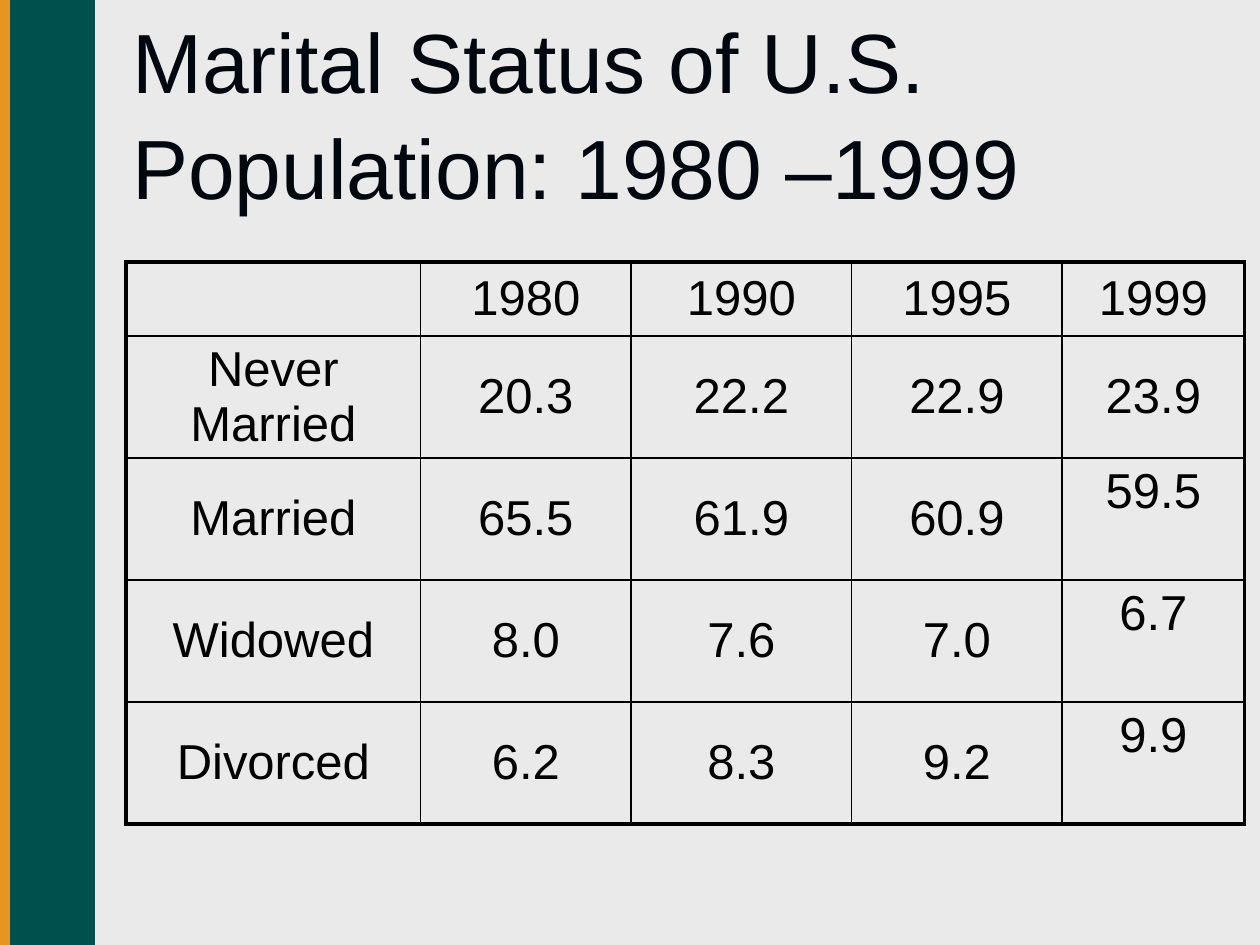
"""Build the slide on marital status by year."""
import dataclasses
import typing

import pptx
import pptx.dml.color
import pptx.enum.shapes
import pptx.enum.text
import pptx.oxml
import pptx.oxml.ns
import pptx.util

Cm = pptx.util.Cm
Pt = pptx.util.Pt
RGB = pptx.dml.color.RGBColor.from_string
Anchor = pptx.enum.text.MSO_ANCHOR
Align = pptx.enum.text.PP_ALIGN


@dataclasses.dataclass(frozen=True)
class Theme:
    font: str = "Arial"
    paper: str = "EAEAEA"
    title: str = "00070E"
    ink: str = "000000"
    green: str = "00514D"
    gold: str = "E69523"
    head: float = 48
    body: float = 28
    thin: float = 1
    thick: float = 2.25


@dataclasses.dataclass(frozen=True)
class Band:
    width: float
    color: str


THEME = Theme()
BANDS = (Band(1.9, THEME.green), Band(0.2, THEME.gold))
COLS = (5.94, 4.24, 4.45, 4.24, 3.68)
ROWS = (1.49,) + (2.46,) * 4
DATA = (
    ("", "1980", "1990", "1995", "1999"),
    ("Never Married", "20.3", "22.2", "22.9", "23.9"),
    ("Married", "65.5", "61.9", "60.9", "59.5"),
    ("Widowed", "8.0", "7.6", "7.0", "6.7"),
    ("Divorced", "6.2", "8.3", "9.2", "9.9"),
)


def add_run(para: typing.Any, text: str, size: float, color: str) -> None:
    run = para.add_run()
    run.text = text
    run.font.name = THEME.font
    run.font.size = Pt(size)
    run.font.color.rgb = RGB(color)


def add_band(slide: typing.Any, band: Band, height: int) -> None:
    kind = pptx.enum.shapes.MSO_SHAPE.RECTANGLE
    shape = slide.shapes.add_shape(kind, 0, 0, Cm(band.width), height)
    shape.shadow.inherit = False
    shape.fill.solid()
    shape.fill.fore_color.rgb = RGB(band.color)
    shape.line.color.rgb = RGB(band.color)
    shape.line.width = Pt(0.75)


def set_title(slide: typing.Any, text: str) -> None:
    title = slide.shapes.title
    title.left, title.top = Cm(2.41), Cm(1.47)
    title.width, title.height = Cm(22.68), Cm(3.02)
    frame = title.text_frame
    frame.word_wrap = True
    frame.auto_size = pptx.enum.text.MSO_AUTO_SIZE.NONE
    frame.vertical_anchor = Anchor.BOTTOM
    para = frame.paragraphs[0]
    para.alignment = Align.LEFT
    para.line_spacing = 1.05
    add_run(para, text, THEME.head, THEME.title)


def set_edges(cell: typing.Any, row: int, col: int) -> None:
    outer = {
        "L": col == 0,
        "R": col == len(COLS) - 1,
        "T": row == 0,
        "B": row == len(ROWS) - 1,
    }
    props = cell._tc.get_or_add_tcPr()
    for spot, (side, edge) in enumerate(outer.items()):
        width = Pt(THEME.thick if edge else THEME.thin)
        line = pptx.oxml.parse_xml(
            f'<a:ln{side} {pptx.oxml.ns.nsdecls("a")} w="{width}">'
            f'<a:solidFill><a:srgbClr val="{THEME.ink}"/></a:solidFill>'
            f"</a:ln{side}>"
        )
        props.insert(spot, line)


def fill_cell(cell: typing.Any, text: str, row: int, col: int) -> None:
    high = row > 1 and col == len(COLS) - 1
    cell.vertical_anchor = Anchor.TOP if high else Anchor.MIDDLE
    cell.fill.background()
    set_edges(cell, row, col)
    if text:
        para = cell.text_frame.paragraphs[0]
        para.alignment = Align.CENTER
        add_run(para, text, THEME.body, THEME.ink)


def add_grid(slide: typing.Any) -> None:
    frame = slide.shapes.add_table(
        len(ROWS), len(COLS), Cm(2.54), Cm(5.28), Cm(sum(COLS)), Cm(sum(ROWS))
    )
    table = frame.table
    table.first_row = table.horz_banding = False
    for col, width in zip(table.columns, COLS):
        col.width = Cm(width)
    for row, height in zip(table.rows, ROWS):
        row.height = Cm(height)
    for r, line in enumerate(DATA):
        for c, text in enumerate(line):
            fill_cell(table.cell(r, c), text, r, c)


def main() -> None:
    deck = pptx.Presentation()
    deck.slide_width, deck.slide_height = Cm(25.4), Cm(19.05)
    slide = deck.slides.add_slide(deck.slide_layouts[5])
    slide.background.fill.solid()
    slide.background.fill.fore_color.rgb = RGB(THEME.paper)
    for band in BANDS:
        add_band(slide, band, deck.slide_height)
    set_title(slide, "Marital Status of U.S. Population: 1980 –1999")
    add_grid(slide)
    deck.save("out.pptx")


if __name__ == "__main__":
    main()
